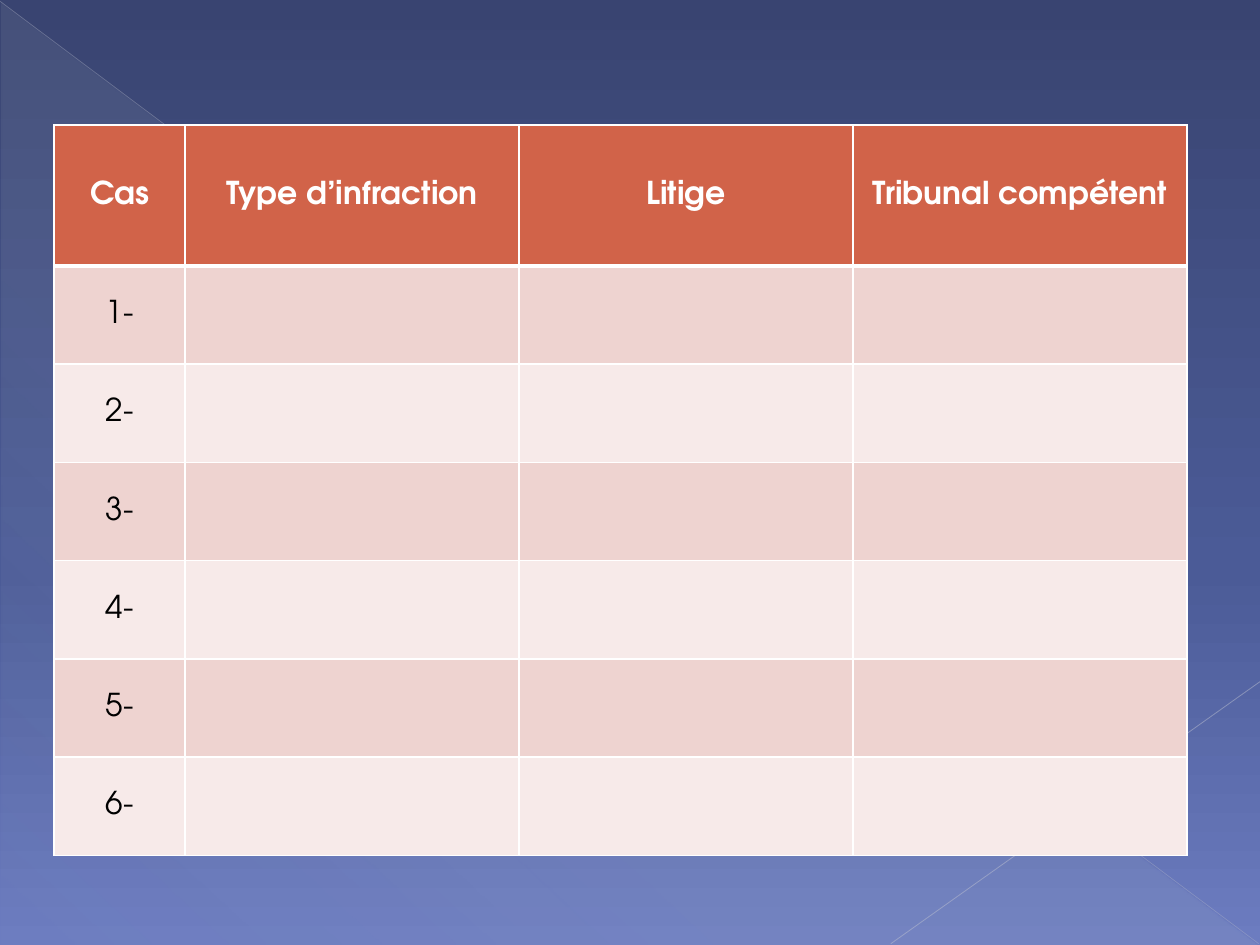
import pptx
import pptx.util
import pptx.dml.color
import pptx.enum.shapes
import pptx.enum.text
import pptx.oxml
import pptx.oxml.ns
from pptx.util import Inches

COLORS = {
    "night": "394471", "dusk": "4B5B97", "lavender": "6C7CC0",
    "mist": "C5D1D7", "diagonal": "BABECD", "corner": "C2C5D2",
    "header": "D16349", "odd_row": "EED3D0", "even_row": "F7EAE9",
    "white": "FFFFFF", "black": "000000",
}
HEADINGS = ["Cas", "Type d’infraction", "Litige", "Tribunal compétent"]
CASE_COUNT = 6


def rgb(name):
    return pptx.dml.color.RGBColor.from_string(COLORS[name])


def xml(tag, content="", attributes=""):
    namespace = pptx.oxml.ns.nsdecls("a")
    return pptx.oxml.parse_xml(f"<a:{tag} {namespace} {attributes}>{content}</a:{tag}>")


def color_xml(name, opacity=100):
    return f'<a:srgbClr val="{COLORS[name]}"><a:alpha val="{opacity * 1000}"/></a:srgbClr>'


class SlideBuilder:
    """Holds the slide being built and its text style."""

    font = "TeX Gyre Adventor"
    size = pptx.util.Pt(18)

    def __init__(self, slide):
        self.slide = slide

    def gradient(self, fill, owner, stops, angle):
        """Fill with (position, colour, opacity) stops, angle clockwise in degrees."""
        fill.gradient()
        gradient = next(owner.iter(pptx.oxml.ns.qn("a:gradFill")))
        for part in list(gradient):
            gradient.remove(part)
        gradient.append(xml("gsLst", "".join(
            f'<a:gs pos="{position * 1000}">{color_xml(color, opacity)}</a:gs>'
            for position, color, opacity in stops)))
        gradient.append(xml("lin", attributes=f'ang="{angle * 60000}" scaled="0"'))

    def background(self, stops, angle):
        self.gradient(self.slide.background.fill, self.slide.element, stops, angle)

    def triangle(self, left, top, width, height, stops, angle):
        triangle = self.slide.shapes.add_shape(
            pptx.enum.shapes.MSO_SHAPE.RIGHT_TRIANGLE,
            Inches(left), Inches(top), Inches(width), Inches(height))
        triangle.shadow.inherit = False
        triangle.line.fill.background()
        self.gradient(triangle.fill, triangle.element, stops, angle)

    def line(self, start, end, color, width, opacity):
        line = self.slide.shapes.add_connector(
            pptx.enum.shapes.MSO_CONNECTOR.STRAIGHT,
            *(Inches(length) for length in start + end))
        line.line.width = pptx.util.Pt(width)
        line.line.color.rgb = rgb(color)
        solid = next(line.element.iter(pptx.oxml.ns.qn("a:solidFill")))
        solid[0].append(xml("alpha", attributes=f'val="{opacity * 1000}"'))
        line.element.spPr.append(xml("effectLst"))

    def table(self, left, top, widths, heights):
        table = self.slide.shapes.add_table(
            len(heights), len(widths), Inches(left), Inches(top),
            Inches(sum(widths)), Inches(sum(heights))).table
        for column, width in zip(table.columns, widths):
            column.width = Inches(width)
        for row, height in zip(table.rows, heights):
            row.height = Inches(height)
        return table

    def cell(self, cell, text, fill, color, bold, top=1, bottom=1):
        """Style one cell; top and bottom are border widths in points."""
        cell.fill.solid()
        cell.fill.fore_color.rgb = rgb(fill)
        cell.vertical_anchor = pptx.enum.text.MSO_ANCHOR.MIDDLE
        borders = {"lnL": 1, "lnR": 1, "lnT": top, "lnB": bottom}
        properties = cell._tc.get_or_add_tcPr()
        for index, (side, width) in enumerate(borders.items()):
            properties.insert(index, xml(
                side, f'<a:solidFill>{color_xml("white")}</a:solidFill>',
                f'w="{width * 12700}"'))
        if text:
            paragraph = cell.text_frame.paragraphs[0]
            paragraph.alignment = pptx.enum.text.PP_ALIGN.CENTER
            run = paragraph.add_run()
            run.text = text
            run.font.name = self.font
            run.font.size = self.size
            run.font.bold = bold
            run.font.color.rgb = rgb(color)


def main():
    deck = pptx.Presentation()
    deck.slide_width, deck.slide_height = Inches(10), Inches(7.5)
    builder = SlideBuilder(deck.slides.add_slide(deck.slide_layouts[6]))

    builder.background(
        [(0, "night", 100), (60, "dusk", 100), (100, "lavender", 100)], 90)
    builder.triangle(0.01, 0.02, 9.98, 7.48,
                     [(0, "mist", 10), (70, "mist", 8), (100, "mist", 1)], 133)
    builder.line((0, 0.01), (9.99, 7.49), "diagonal", 0.39, 35)
    builder.line((10, 5.41), (7.07, 7.49), "corner", 0.47, 45)

    cases = builder.table(0.43, 0.99, [1.04] + [2.65] * 3,
                          [1.12] + [0.78] * CASE_COUNT)
    for column, heading in enumerate(HEADINGS):
        builder.cell(cases.cell(0, column), heading, "header", "white", True, bottom=3)
        for number in range(1, CASE_COUNT + 1):
            builder.cell(cases.cell(number, column),
                         f"{number}-" if column == 0 else "",
                         "odd_row" if number % 2 else "even_row", "black", False,
                         top=3 if number == 1 else 1)

    deck.save("out.pptx")


if __name__ == "__main__":
    main()
